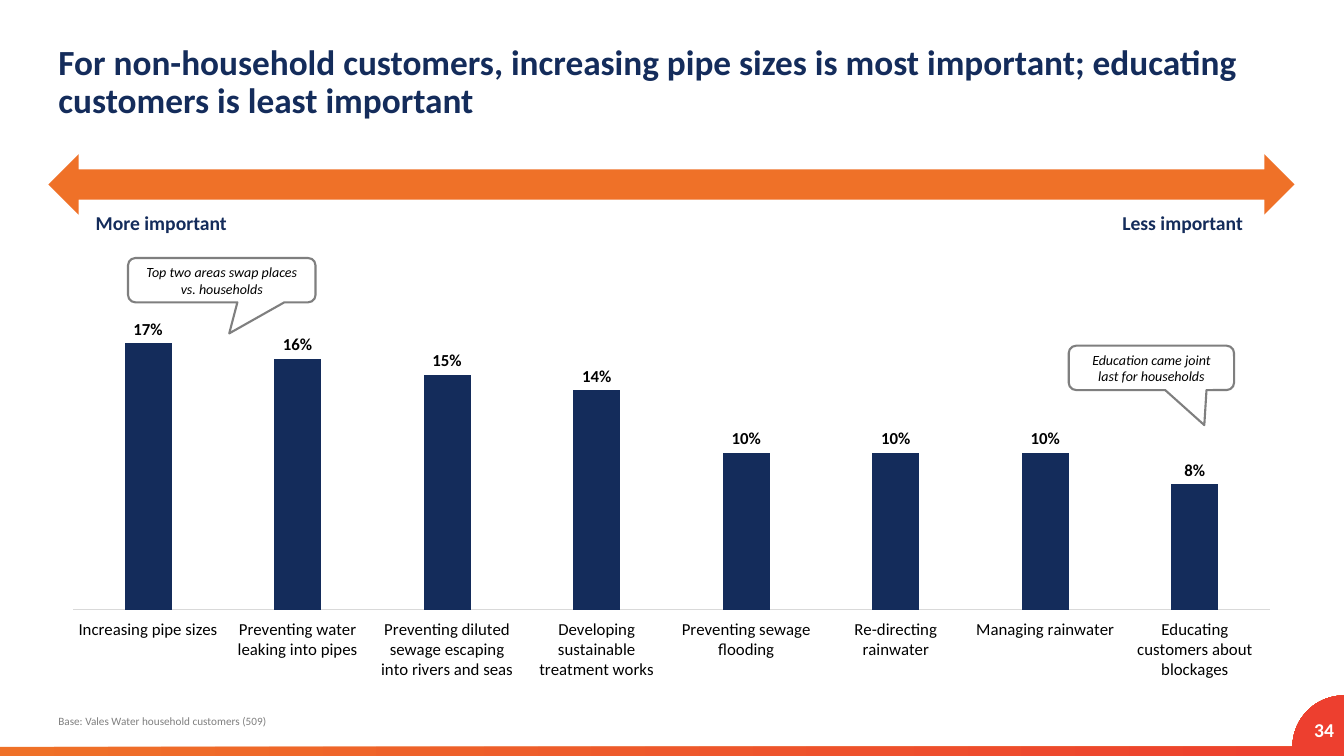
from math import cos, pi, sin

from lxml import etree
from pptx import Presentation
from pptx.chart.data import CategoryChartData
from pptx.dml.color import RGBColor
from pptx.enum.chart import XL_CHART_TYPE, XL_LABEL_POSITION, XL_TICK_LABEL_POSITION, XL_TICK_MARK
from pptx.enum.shapes import MSO_SHAPE
from pptx.enum.text import MSO_ANCHOR, MSO_AUTO_SIZE, PP_ALIGN
from pptx.oxml.ns import qn
from pptx.util import Inches, Pt

COLUMNS = XL_CHART_TYPE.COLUMN_CLUSTERED
OUTSIDE_END = XL_LABEL_POSITION.OUTSIDE_END
NO_TICK = XL_TICK_MARK.NONE
LABELS_LOW = XL_TICK_LABEL_POSITION.LOW
DOUBLE_ARROW = MSO_SHAPE.LEFT_RIGHT_ARROW
CALLOUT = MSO_SHAPE.ROUNDED_RECTANGULAR_CALLOUT
TOP, MIDDLE = MSO_ANCHOR.TOP, MSO_ANCHOR.MIDDLE
NO_AUTOFIT = MSO_AUTO_SIZE.NONE
LEFT, CENTER, RIGHT = PP_ALIGN.LEFT, PP_ALIGN.CENTER, PP_ALIGN.RIGHT

FONT = "Calibri"
NAVY, ORANGE, RED = "142C5B", "EF7128", "ED3F2F"
GREY, PALE_GREY, BLACK, WHITE = "7F7F7F", "D9D9D9", "000000", "FFFFFF"


def rgb(value):
    return RGBColor.from_string(value)


def write(shape, text, size, color, align=LEFT, anchor=TOP, bold=False, italic=False):
    """Fill a shape with one formatted paragraph and return that paragraph."""
    frame = shape.text_frame
    frame.word_wrap = True
    frame.auto_size = NO_AUTOFIT
    frame.vertical_anchor = anchor
    paragraph = frame.paragraphs[0]
    paragraph.text = text
    paragraph.alignment = align
    font = paragraph.font
    font.name, font.size, font.bold, font.italic = FONT, Pt(size), bold, italic
    font.color.rgb = rgb(color)
    return paragraph


prs = Presentation()
prs.slide_width, prs.slide_height = Inches(13.33), Inches(7.5)
slide = prs.slides.add_slide(prs.slide_layouts[5])
shapes = slide.shapes

# Footer strip rising into a quarter circle at the right
band_top, corner_radius, steps = 7.41, 0.51, 24
corner = []
for step in range(steps + 1):
    angle = pi / 2 * step / steps
    corner.append((Inches(13.33 - corner_radius * cos(angle)),
                   Inches(band_top - corner_radius * sin(angle))))
outline = shapes.build_freeform(0, Inches(7.5))
outline.add_line_segments([(0, Inches(band_top)), *corner, (Inches(13.33), Inches(7.5))])
footer = outline.convert_to_shape()
footer.shadow.inherit = False
footer.line.fill.background()
footer.fill.gradient()
footer.fill.gradient_angle = 0
for stop, color in zip(footer.fill.gradient_stops, (ORANGE, RED)):
    stop.color.rgb = rgb(color)

page_number = shapes.add_textbox(Inches(12.39), Inches(7.04), Inches(0.94), Inches(0.4))
write(page_number, "34", 14, WHITE, RIGHT, MIDDLE, bold=True)
page_number.text_frame.margin_top = page_number.text_frame.margin_bottom = 0

title = shapes.title
title.left, title.top, title.width, title.height = (
    Inches(0.48), Inches(0.4), Inches(12.61), Inches(0.6))
heading = write(title, "For non-household customers, increasing pipe sizes is most important; "
                "educating customers is least important", 25.2, NAVY, bold=True)
heading.line_spacing = 0.9

base_note = shapes.add_textbox(Inches(0.48), Inches(7.02), Inches(11.9), Inches(0.36))
base = write(base_note, "Base: Vales Water household customers (509)", 8, GREY)
base.line_spacing = 1.1
base.space_before = Pt(10)

# Priorities chart
priorities = {
    "Increasing pipe sizes": 0.17,
    "Preventing water leaking into pipes": 0.16,
    "Preventing diluted sewage escaping into rivers and seas": 0.15,
    "Developing sustainable treatment works": 0.14,
    "Preventing sewage flooding": 0.10,
    "Re-directing rainwater": 0.10,
    "Managing rainwater": 0.10,
    "Educating customers about blockages": 0.08,
}
data = CategoryChartData(number_format="0%")
data.categories = list(priorities)
data.add_series("Series 1", list(priorities.values()))
chart = shapes.add_chart(COLUMNS, Inches(0.48), Inches(1.27), Inches(12.36), Inches(5.69), data).chart
chart.has_legend = False
chart.has_title = False
chart.font.name, chart.font.size = FONT, Pt(10)
chart.font.color.rgb = rgb(BLACK)

value_axis = chart.value_axis
value_axis.minimum_scale, value_axis.maximum_scale = 0, 0.3
value_axis.has_major_gridlines = False
value_axis.visible = False

category_axis = chart.category_axis
category_axis.major_tick_mark = category_axis.minor_tick_mark = NO_TICK
category_axis.tick_label_position = LABELS_LOW
category_axis.tick_labels.font.size = Pt(12)
category_axis.format.line.color.rgb = rgb(PALE_GREY)
category_axis.format.line.width = Pt(0.75)

plot = chart.plots[0]
plot.gap_width, plot.overlap, plot.vary_by_categories = 219, -27, False
bars = plot.series[0].format
bars.fill.solid()
bars.fill.fore_color.rgb = rgb(NAVY)

plot.has_data_labels = True
labels = plot.data_labels
labels.show_value = True
labels.position = OUTSIDE_END
labels.number_format, labels.number_format_is_linked = "0%", False
labels.font.name, labels.font.size, labels.font.bold = FONT, Pt(12), True
labels.font.color.rgb = rgb(BLACK)

# Fixed inner plot area, as fractions of the chart frame
plot_area = plot._element.getparent()
for old_layout in plot_area.findall(qn("c:layout")):
    plot_area.remove(old_layout)
layout = etree.Element(qn("c:layout"))
plot_area.insert(0, layout)
manual = etree.SubElement(layout, qn("c:manualLayout"))
for tag, value in (("layoutTarget", "inner"), ("xMode", "edge"), ("yMode", "edge"),
                   ("x", "0.02"), ("y", "0.02"), ("w", "0.96"), ("h", "0.82")):
    etree.SubElement(manual, qn(f"c:{tag}")).set("val", value)

# Importance scale
scale = shapes.add_shape(DOUBLE_ARROW, Inches(0.48), Inches(1.53), Inches(12.36), Inches(0.6))
scale.shadow.inherit = False
scale.fill.solid()
scale.fill.fore_color.rgb = rgb(ORANGE)
scale.line.fill.background()

for left, wording in ((0.72, "More important"), (10.85, "Less important")):
    scale_end = shapes.add_textbox(Inches(left), Inches(1.98), Inches(1.76), Inches(0.44))
    label = write(scale_end, wording, 14, NAVY, CENTER, MIDDLE, bold=True)
    label.line_spacing = 1.1
    label.space_after = Pt(6)

for left, top, width, tip, remark in (
    (1.27, 2.56, 1.86, (0.04, 1.2), "Top two areas swap places vs. households"),
    (10.6, 3.43, 1.64, (0.32, 1.29), "Education came joint last for households"),
):
    callout = shapes.add_shape(CALLOUT, Inches(left), Inches(top), Inches(width), Inches(0.44))
    callout.adjustments[0], callout.adjustments[1] = tip
    callout.shadow.inherit = False
    callout.fill.background()
    callout.line.color.rgb = rgb(GREY)
    callout.line.width = Pt(1.5)
    write(callout, remark, 10, BLACK, CENTER, MIDDLE, italic=True)

prs.save("out.pptx")
